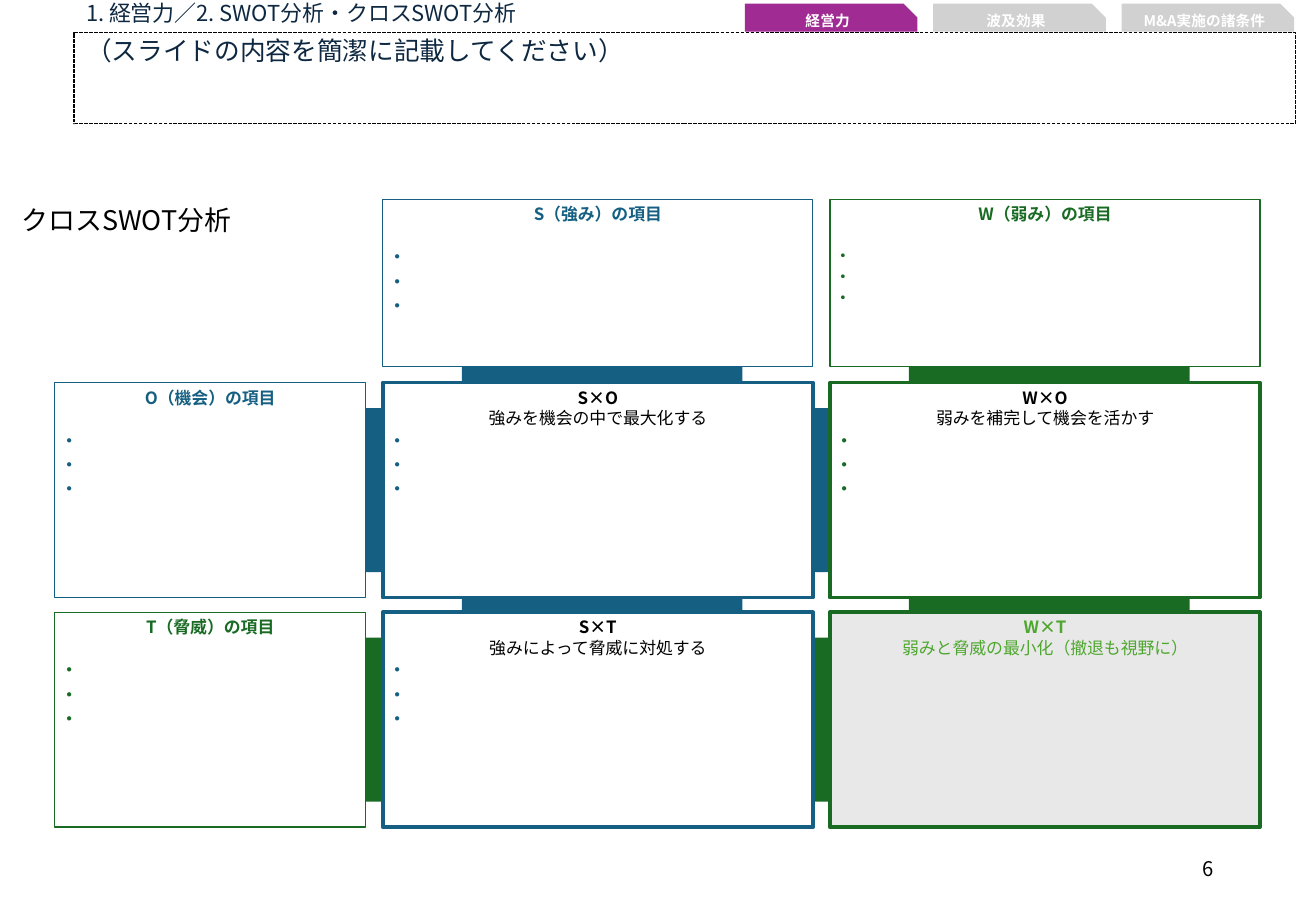
from dataclasses import dataclass

from lxml.etree import SubElement
from pptx import Presentation
from pptx.dml.color import RGBColor
from pptx.enum.dml import MSO_LINE
from pptx.enum.shapes import MSO_SHAPE
from pptx.enum.text import MSO_ANCHOR, PP_ALIGN
from pptx.oxml.ns import qn
from pptx.util import Inches, Pt


@dataclass(frozen=True)
class Theme:
    font: str = "Noto Sans CJK JP"
    blue: str = "156082"
    green: str = "196B24"
    light_green: str = "4EA72E"
    purple: str = "A02B93"
    navy: str = "0E2841"
    gray: str = "D1D1D1"
    pale: str = "E8E8E8"
    black: str = "000000"
    white: str = "FFFFFF"
    tab: float = 8.7
    cell: float = 10
    bullet: float = 12
    small_bullet: float = 10.5
    page: float = 12
    section: float = 13
    message: float = 15.2
    heading: float = 16
    thin: float = 0.75
    thick: float = 2.25


T = Theme()

SECTION = "1. 経営力／2. SWOT分析・クロスSWOT分析"
MESSAGE = "（スライドの内容を簡潔に記載してください）"
HEADING = "クロスSWOT分析"
PAGE = "6"
TABS = [("経営力", T.purple), ("波及効果", T.gray), ("M&A実施の諸条件", T.gray)]
BULLETS = ["・"] * 3
COLUMNS = [("S（強み）の項目", T.blue, T.bullet), ("W（弱み）の項目", T.green, T.small_bullet)]
ROWS = [("O（機会）の項目", T.blue), ("T（脅威）の項目", T.green)]
CROSS = [
    [("S×O", "強みを機会の中で最大化する", BULLETS), ("W×O", "弱みを補完して機会を活かす", BULLETS)],
    [("S×T", "強みによって脅威に対処する", BULLETS), ("W×T", "弱みと脅威の最小化（撤退も視野に）", [])],
]

COL_X, COL_W, COL_STEP = 3.15, 3.54, 3.68
ROW_Y, ROW_H, ROW_STEP = 3.15, 1.77, 1.89
HEAD_X, HEAD_W = 0.45, 2.56
HEAD_Y, HEAD_H = 1.64, 1.38
TAB_X, TAB_STEP = 6.13, 1.55

prs = Presentation()
prs.slide_width, prs.slide_height = Inches(10.83), Inches(7.5)
s = prs.slides.add_slide(prs.slide_layouts[6])


def rgb(color):
    return RGBColor.from_string(color)


def add_box(x, y, w, h, fill=None, line=None, width=T.thin, kind=MSO_SHAPE.RECTANGLE):
    sp = s.shapes.add_shape(kind, Inches(x), Inches(y), Inches(w), Inches(h))
    sp.shadow.inherit = False
    if fill:
        sp.fill.solid()
        sp.fill.fore_color.rgb = rgb(fill)
    else:
        sp.fill.background()
    if line:
        sp.line.color.rgb = rgb(line)
        sp.line.width = Pt(width)
    else:
        sp.line.fill.background()
    return sp


def add_text_box(x, y, w, h):
    return s.shapes.add_textbox(Inches(x), Inches(y), Inches(w), Inches(h))


def write(sp, lines, anchor=MSO_ANCHOR.TOP, spacing=None, inset=None):
    tf = sp.text_frame
    tf.word_wrap = True
    tf.vertical_anchor = anchor
    if inset is not None:
        tf.margin_left = tf.margin_right = tf.margin_top = tf.margin_bottom = Inches(inset)
    for i, (text, size, color, bold, align, before) in enumerate(lines):
        p = tf.add_paragraph() if i else tf.paragraphs[0]
        p.alignment = align
        p.space_before = Pt(before)
        if spacing:
            p.line_spacing = spacing
        r = p.add_run()
        r.text = text
        r.font.size, r.font.bold = Pt(size), bold
        r.font.color.rgb = rgb(color)
        r.font.name = T.font
        SubElement(r.font._element, qn("a:ea")).set("typeface", T.font)
    return tf


def line_of(text, size, color, bold=False, align=PP_ALIGN.LEFT, before=0):
    return text, size, color, bold, align, before


def bullet_lines(bullets, size, color, gap=0):
    return [line_of(b, size, color, before=0 if i else gap) for i, b in enumerate(bullets)]


def add_head(x, y, w, h, title, color, size=T.bullet):
    lines = [line_of(title, T.cell, color, True, PP_ALIGN.CENTER)]
    lines += bullet_lines(BULLETS, size, color, gap=12)
    write(add_box(x, y, w, h, T.white, color), lines, inset=0.04)


def col_x(i):
    return COL_X + i * COL_STEP


def row_y(i):
    return ROW_Y + i * ROW_STEP


for i, (_, color) in reversed(list(enumerate(ROWS))):
    add_box(0.83, row_y(i) + 0.21, 9.35, 1.35, color)
for i, (_, color, _) in reversed(list(enumerate(COLUMNS))):
    add_box(col_x(i) + 0.65, 1.79, 2.31, 4.86, color)

for i, (title, color, size) in enumerate(COLUMNS):
    add_head(col_x(i), HEAD_Y, COL_W, HEAD_H, title, color, size)

for i, (title, color) in enumerate(ROWS):
    add_head(HEAD_X, row_y(i), HEAD_W, ROW_H, title, color)
    for j, (name, strategy, bullets) in enumerate(CROSS[i]):
        edge = COLUMNS[j][1]
        fill, ink = (T.white, T.black) if bullets else (T.pale, T.light_green)
        lines = [line_of(name, T.cell, ink, True, PP_ALIGN.CENTER),
                 line_of(strategy, T.cell, ink, False, PP_ALIGN.CENTER)]
        lines += bullet_lines(bullets, T.bullet, edge)
        write(add_box(col_x(j), row_y(i), COL_W, ROW_H, fill, edge, T.thick), lines, inset=0.04)

for i, (label, fill) in enumerate(TABS):
    sp = add_box(TAB_X + i * TAB_STEP, 0.03, 1.42, 0.23, fill, kind=MSO_SHAPE.SNIP_1_RECTANGLE)
    sp.adjustments[0] = 0.5
    write(sp, [line_of(label, T.tab, T.white, True, PP_ALIGN.CENTER)], MSO_ANCHOR.MIDDLE)

tf = write(add_text_box(0.61, 0, 4.53, 0.37), [line_of(SECTION, T.section, T.navy)], spacing=0.9)
tf.margin_top = Inches(0.02)
write(add_text_box(0.08, 1.65, 3.49, 0.31), [line_of(HEADING, T.heading, T.black)], MSO_ANCHOR.MIDDLE)
write(add_text_box(7.65, 6.95, 2.44, 0.4),
      [line_of(PAGE, T.page, T.black, align=PP_ALIGN.RIGHT)], MSO_ANCHOR.MIDDLE)

message = add_box(0.61, 0.27, 10.05, 0.75, line=T.black)
message.line.dash_style = MSO_LINE.SQUARE_DOT
write(message, [line_of(MESSAGE, T.message, T.navy)], spacing=0.9)

prs.save("out.pptx")
